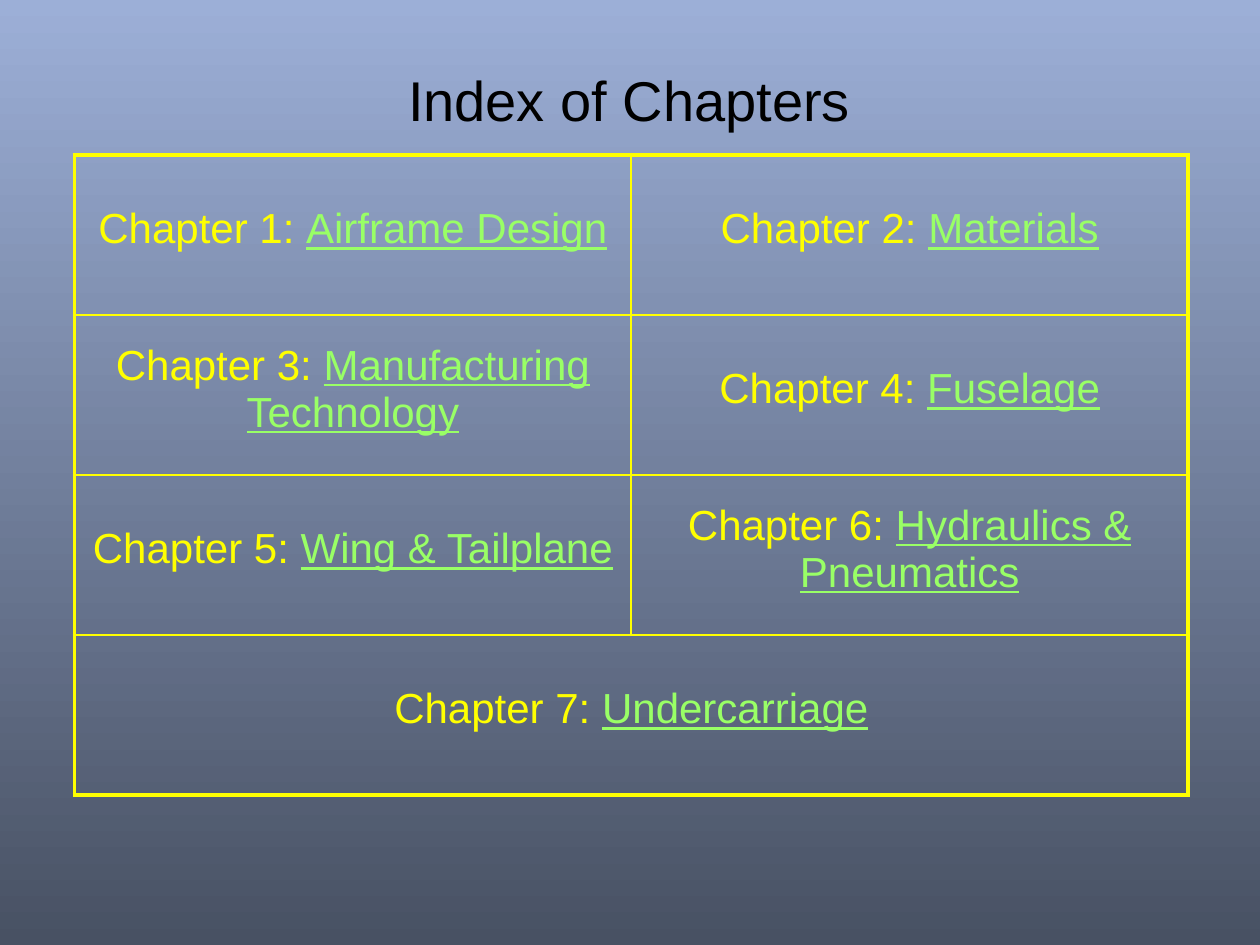
from lxml.etree import SubElement
from pptx import Presentation
from pptx.dml.color import RGBColor
from pptx.enum.text import MSO_ANCHOR as Anchor, PP_ALIGN as Align
from pptx.oxml import parse_xml
from pptx.oxml.ns import nsdecls, qn
from pptx.util import Inches, Pt

SKY, SLATE = "9CAFD7", "485163"
BLACK, YELLOW, GREEN = "000000", "FFFF00", "99FF66"
CHAPTERS = [
    "Airframe Design", "Materials",
    "Manufacturing Technology", "Fuselage",
    "Wing & Tailplane", "Hydraulics & Pneumatics",
    "Undercarriage",
]
COLUMNS, ROWS = 2, 4
COLUMN_WIDTH, ROW_HEIGHT = 4.42, 1.27
OUTER_LINE, INNER_LINE = 2.25, 1


def color(hex_string):
    return RGBColor.from_string(hex_string)


def paint_background(slide):
    fill = slide.background.fill
    fill.gradient()
    fill.gradient_angle = 270
    for stop, shade in zip(fill.gradient_stops, (SKY, SLATE)):
        stop.color.rgb = color(shade)


def add_run(paragraph, text, size, shade, underline=False):
    run = paragraph.add_run()
    run.text = text
    run.font.name = "Arial"
    run.font.size = Pt(size)
    run.font.color.rgb = color(shade)
    run.font.underline = underline


def add_title(slide, text):
    shape = slide.shapes.add_textbox(
        Inches(0.58), Inches(0.16), Inches(8.83), Inches(1.25))
    frame = shape.text_frame
    frame.word_wrap = True
    frame.vertical_anchor = Anchor.MIDDLE
    paragraph = frame.paragraphs[0]
    paragraph.alignment = Align.CENTER
    add_run(paragraph, text, 32, BLACK)


def set_borders(cell, widths):
    """Draw yellow borders; widths are left, right, top, bottom in points."""
    properties = cell._tc.get_or_add_tcPr()
    for index, (side, width) in enumerate(zip("LRTB", widths)):
        line = parse_xml(f'<a:ln{side} {nsdecls("a")} w="{Pt(width)}"/>')
        fill = SubElement(line, qn("a:solidFill"))
        SubElement(fill, qn("a:srgbClr"), val=YELLOW)
        properties.insert(index, line)


def fill_cell(cell, number, chapter):
    cell.vertical_anchor = Anchor.MIDDLE
    cell.margin_bottom = Inches(0.14)
    paragraph = cell.text_frame.paragraphs[0]
    paragraph.alignment = Align.CENTER
    add_run(paragraph, f"Chapter {number}: ", 24, YELLOW)
    add_run(paragraph, chapter, 24, GREEN, underline=True)


def add_chapter_table(slide):
    shape = slide.shapes.add_table(
        ROWS, COLUMNS, Inches(0.59), Inches(1.23),
        Inches(COLUMNS * COLUMN_WIDTH), Inches(ROWS * ROW_HEIGHT))
    table = shape.table
    table.first_row = table.horz_banding = False
    for row in range(ROWS):
        for column in range(COLUMNS):
            cell = table.cell(row, column)
            cell.fill.background()
            last_row = row == ROWS - 1
            edges = (column == 0, last_row or column == COLUMNS - 1,
                     row == 0, last_row)
            set_borders(cell, [OUTER_LINE if edge else INNER_LINE
                               for edge in edges])
    table.cell(ROWS - 1, 0).merge(table.cell(ROWS - 1, COLUMNS - 1))
    for index, chapter in enumerate(CHAPTERS):
        fill_cell(table.cell(*divmod(index, COLUMNS)), index + 1, chapter)


def main():
    presentation = Presentation()
    presentation.slide_width = Inches(10)
    presentation.slide_height = Inches(7.5)
    slide = presentation.slides.add_slide(presentation.slide_layouts[6])
    paint_background(slide)
    add_title(slide, "Index of Chapters")
    add_chapter_table(slide)
    presentation.save("out.pptx")


if __name__ == "__main__":
    main()
